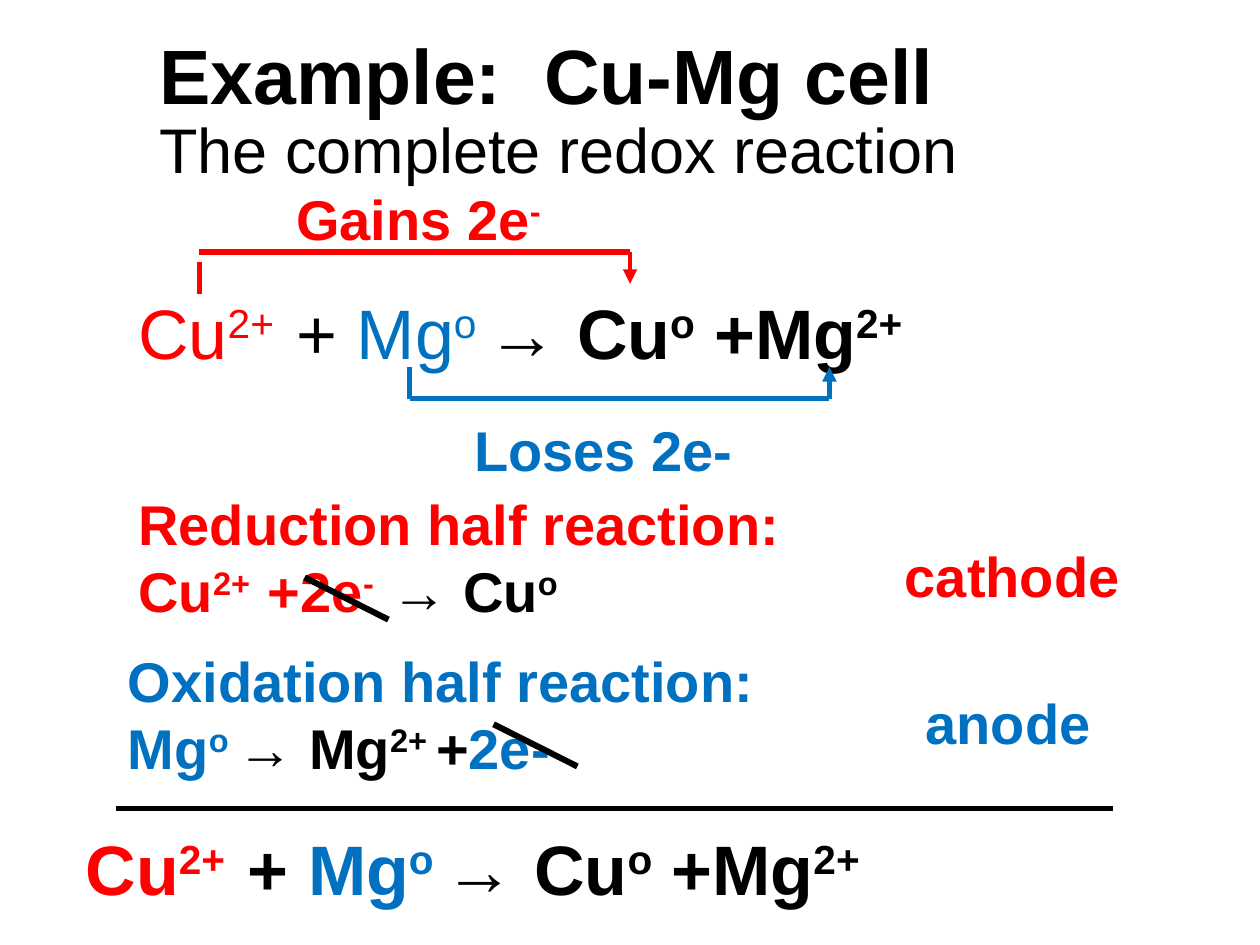
from lxml.etree import SubElement
from pptx import Presentation
from pptx.dml.color import RGBColor
from pptx.enum.shapes import MSO_CONNECTOR
from pptx.enum.text import MSO_ANCHOR, MSO_AUTO_SIZE, PP_ALIGN
from pptx.oxml.ns import qn
from pptx.util import Cm, Pt

COLOURS = {"text": "000000", "reduction": "FF0000", "oxidation": "0070C0"}
RAISED = "30000"


def colour(role):
    return RGBColor.from_string(COLOURS[role])


def part(text, role="text", bold=True, raised=False):
    return {"text": text, "role": role, "bold": bold, "raised": raised}


def fill_frame(frame, lines, size):
    """Write lines, each a list of parts, into a text frame."""
    layout = {"word_wrap": True, "auto_size": MSO_AUTO_SIZE.NONE,
              "vertical_anchor": MSO_ANCHOR.TOP}
    for name, value in layout.items():
        setattr(frame, name, value)
    for index, line in enumerate(lines):
        paragraph = frame.add_paragraph() if index else frame.paragraphs[0]
        paragraph.alignment = PP_ALIGN.LEFT
        for piece in line:
            run = paragraph.add_run()
            run.text = piece["text"]
            look = {"name": "Arial", "size": Pt(piece.get("size", size)),
                    "bold": piece["bold"]}
            for name, value in look.items():
                setattr(run.font, name, value)
            run.font.color.rgb = colour(piece["role"])
            if piece["raised"]:
                run._r.get_or_add_rPr().set("baseline", RAISED)


def add_text(slide, box, lines, size):
    label = slide.shapes.add_textbox(*map(Cm, box))
    fill_frame(label.text_frame, lines, size)


def add_line(slide, start, end, role, weight, arrow=False):
    line = slide.shapes.add_connector(
        MSO_CONNECTOR.STRAIGHT, *map(Cm, (*start, *end)))
    line.line.color.rgb = colour(role)
    line.line.width = Pt(weight)
    properties = line._element.spPr
    if arrow:
        SubElement(properties.find(qn("a:ln")), qn("a:tailEnd"), type="triangle")
    SubElement(properties, qn("a:effectLst"))


def add_heading(slide, box):
    left, top, width, height = box
    title = slide.shapes.title
    placement = {"left": left, "top": top, "width": width, "height": height}
    for name, value in placement.items():
        setattr(title, name, Cm(value))
    fill_frame(title.text_frame, [[part("Example:  Cu-Mg cell")]], 44)
    add_text(slide, (left, top + 1.68, 21.59, 1.8),
             [[part("The complete redox reaction", bold=False)]], 36)


def add_equation(slide, box, reactants_bold):
    """Write the net reaction, with reactants either bold or regular."""
    add_text(slide, box, [[
        part("Cu", "reduction", reactants_bold),
        part("2+  ", "reduction", reactants_bold, raised=True),
        part("+ ", bold=reactants_bold),
        part("Mg", "oxidation", reactants_bold),
        part("o ", "oxidation", reactants_bold, raised=True),
        part("→ ", bold=False),
        part("Cu"), part("o", raised=True),
        part(" +Mg"), part("2+", raised=True),
    ]], 40)


def add_transfer(slide, box, role, bar_weight, start_leg, arrow_leg):
    """Draw a bracket along the box's top; legs are (from, to) offsets from it."""
    left, bar, width = box
    right = left + width
    add_line(slide, (left, bar), (right, bar), role, bar_weight)
    for x, leg, arrow in ((left, start_leg, False), (right, arrow_leg, True)):
        begin, end = leg
        add_line(slide, (x, bar + begin), (x, bar + end), role, 2.75, arrow)


def add_half_reaction(slide, box, lines, strike, electrode):
    """Write a half reaction, cross out its electrons and name its electrode."""
    left, top, _, _ = box
    add_text(slide, box, lines, 32)
    dx, dy, width, name, role = electrode
    add_text(slide, (left + dx, top + dy, width, 1.63), [[part(name, role)]], 32)
    x, y = left + strike[0], top + strike[1]
    add_line(slide, (x, y), (x + 1.69, y + 0.85), "text", 3.5)


def main():
    presentation = Presentation()
    presentation.slide_width, presentation.slide_height = Cm(25.4), Cm(19.05)
    slide = presentation.slides.add_slide(presentation.slide_layouts[5])

    add_heading(slide, (2.96, 0.42, 19.26, 2.14))
    add_equation(slide, (2.54, 5.72, 22.86, 1.97), reactants_bold=False)

    add_transfer(slide, (4.02, 5.08, 8.68), "reduction", 3.25,
                 start_leg=(0.85, 0.21), arrow_leg=(0, 0.64))
    add_text(slide, (5.72, 3.6, 9.53, 1.63),
             [[part("Gains 2e", "reduction"),
               part("-", "reduction", raised=True)]], 32)
    add_transfer(slide, (8.26, 8.04, 8.46), "oxidation", 2.75,
                 start_leg=(0, -0.64), arrow_leg=(0, -0.64))
    add_text(slide, (9.31, 8.26, 7.41, 1.63),
             [[part("Loses 2e-", "oxidation")]], 32)

    reduction = [
        [part("Reduction half reaction:", "reduction")],
        [part("Cu", "reduction"), part("2+  ", "reduction", raised=True),
         part("+2e", "reduction"), part("- ", "reduction", raised=True),
         {**part(" ", bold=False), "size": 18}, part("→ ", bold=False),
         part("Cu"), part("o", raised=True)],
    ]
    add_half_reaction(slide, (2.54, 9.74, 17.57, 2.99), reduction, (3.6, 1.9),
                      (15.45, 1.06, 6.56, "cathode", "reduction"))
    oxidation = [
        [part("Oxidation half reaction:", "oxidation")],
        [part("Mg", "oxidation"), part("o ", "oxidation", raised=True),
         part("→ Mg"), part("2+ ", raised=True), part("+"),
         part("2e-", "oxidation")],
    ]
    add_half_reaction(slide, (2.33, 12.91, 17.57, 2.99), oxidation, (7.62, 1.69),
                      (16.08, 0.85, 4.45, "anode", "oxidation"))

    add_line(slide, (2.33, 16.3), (22.43, 16.3), "text", 3.25)
    add_equation(slide, (1.48, 16.51, 22.86, 1.97), reactants_bold=True)
    presentation.save("out.pptx")


if __name__ == "__main__":
    main()
